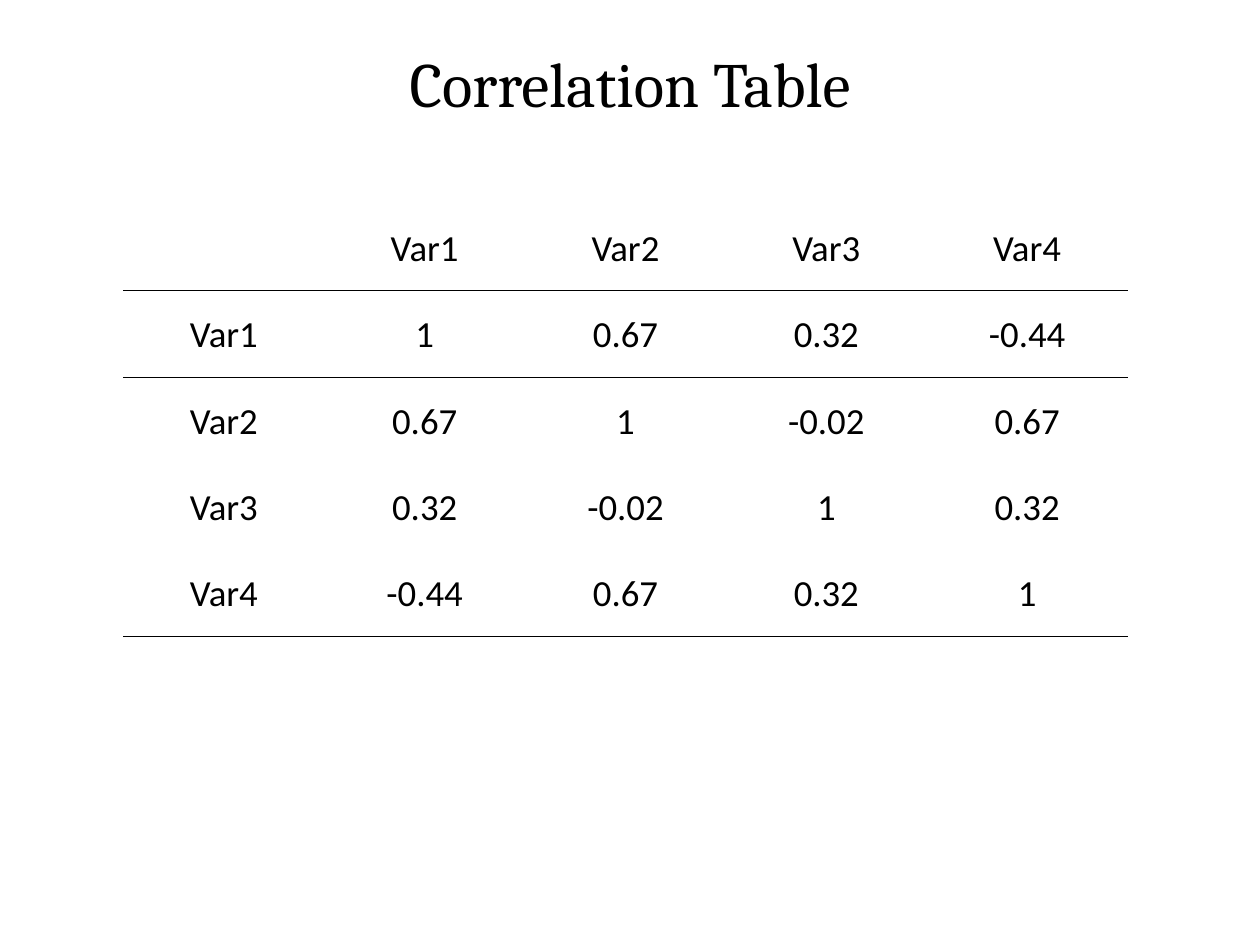
from lxml import etree
from pptx import Presentation
from pptx.dml.color import RGBColor
from pptx.enum.text import MSO_ANCHOR, PP_ALIGN
from pptx.oxml.ns import qn
from pptx.util import Inches, Pt

CENTER = PP_ALIGN.CENTER
TOP, MIDDLE = MSO_ANCHOR.TOP, MSO_ANCHOR.MIDDLE
BLACK, WHITE = "000000", "FFFFFF"
NO_STYLE = "{2D5ABB26-0587-4C30-8999-92F81FD0307C}"
TITLE_FONT = {"name": "Cambria", "size": Pt(36)}
CELL_FONT = {"name": "Calibri", "size": Pt(21)}
CELL_FORMAT = {
    "vertical_anchor": MIDDLE,
    "margin_left": Inches(0.02),
    "margin_right": Inches(0.02),
    "margin_top": Inches(0.02),
    "margin_bottom": 0,
}
CORRELATIONS = [
    ["", "Var1", "Var2", "Var3", "Var4"],
    ["Var1", "1", "0.67", "0.32", "-0.44"],
    ["Var2", "0.67", "1", "-0.02", "0.67"],
    ["Var3", "0.32", "-0.02", "1", "0.32"],
    ["Var4", "-0.44", "0.67", "0.32", "1"],
]
RULES = {0: "lnB", 1: "lnT", len(CORRELATIONS) - 1: "lnB"}


def color(value):
    """Turn a hex string into a colour."""
    return RGBColor.from_string(value)


def write(tf, text, font):
    """Write one centred black paragraph with the given font values."""
    tf.text = text
    p = tf.paragraphs[0]
    p.alignment = CENTER
    for name, value in font.items():
        setattr(p.font, name, value)
    p.font.color.rgb = color(BLACK)


def add_rule(cell, side):
    """Draw a thin black border on one side of a cell."""
    ln = etree.Element(qn(f"a:{side}"), w=str(Pt(0.5)))
    fill = etree.SubElement(ln, qn("a:solidFill"))
    etree.SubElement(fill, qn("a:srgbClr"), val=BLACK)
    cell._tc.get_or_add_tcPr().insert(0, ln)


def place_title(s, text, left, top, width, height):
    """Place and format the slide title in its box."""
    sp = s.shapes.title
    sp.left, sp.top, sp.width, sp.height = left, top, width, height
    write(sp.text_frame, text, TITLE_FONT)
    sp.text_frame.vertical_anchor = TOP


def place_table(s, rows, left, top, width, height):
    """Place the correlation table with even rows and columns in its box."""
    table = s.shapes.add_table(len(rows), len(rows[0]), left, top, width, height).table
    table.first_row = table.horz_banding = False
    table._tbl.tblPr.find(qn("a:tableStyleId")).text = NO_STYLE
    for i, row in enumerate(rows):
        for j, text in enumerate(row):
            cell = table.cell(i, j)
            write(cell.text_frame, text, CELL_FONT)
            for name, value in CELL_FORMAT.items():
                setattr(cell, name, value)
            cell.fill.solid()
            cell.fill.fore_color.rgb = color(WHITE)
            if i in RULES:
                add_rule(cell, RULES[i])


def main():
    """Build the slide and save it."""
    prs = Presentation()
    prs.slide_width, prs.slide_height = Inches(10), Inches(7.5)
    s = prs.slides.add_slide(prs.slide_layouts[5])
    place_title(s, "Correlation Table", Inches(0.5), Inches(0.3), Inches(9), Inches(1.25))
    place_table(s, CORRELATIONS, Inches(0.98), Inches(1.62), Inches(7.97), Inches(3.43))
    prs.save("out.pptx")


if __name__ == "__main__":
    main()
